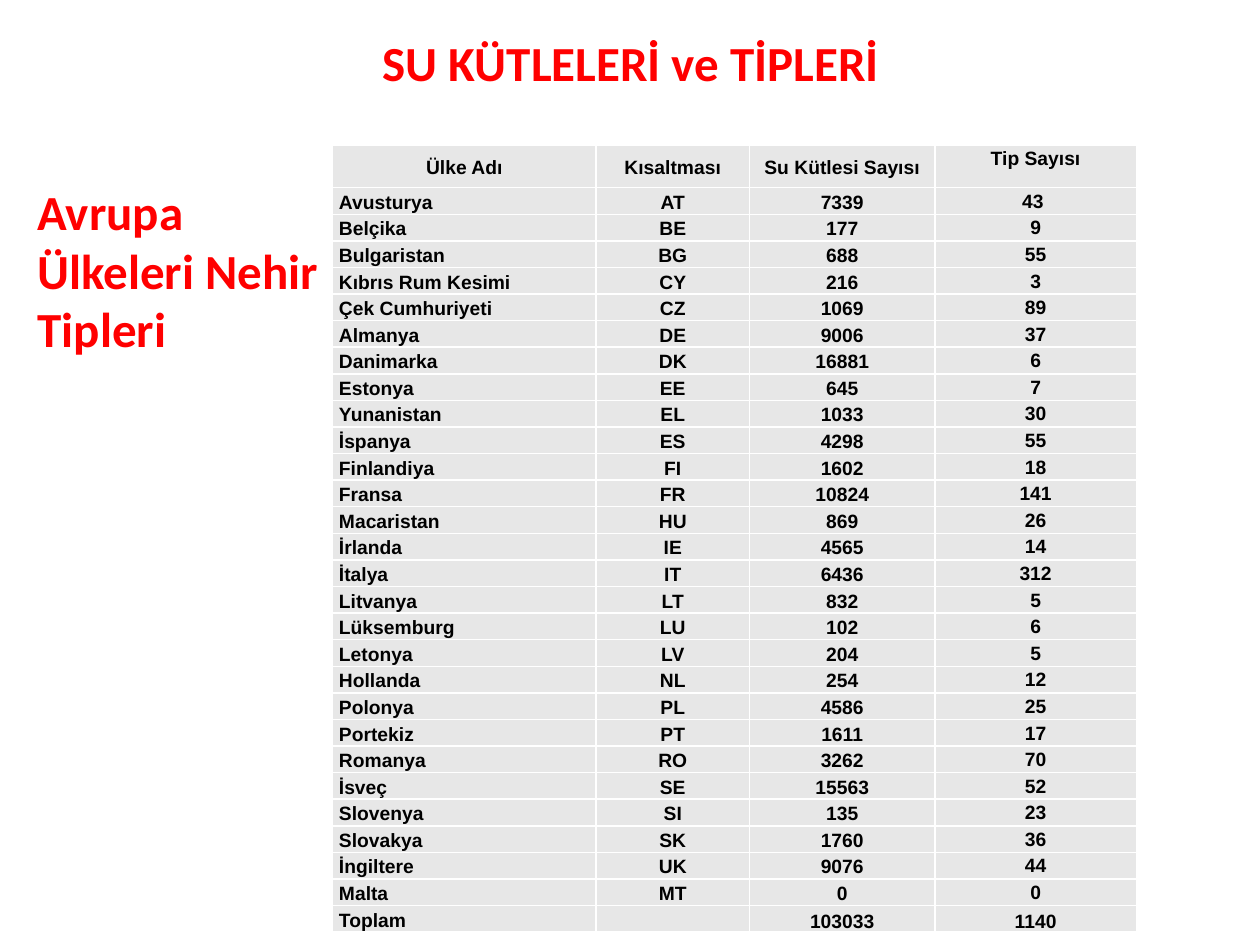
from typing import NamedTuple

from lxml import etree
from pptx import Presentation
from pptx.dml.color import RGBColor
from pptx.enum import text
from pptx.oxml.ns import qn
from pptx.util import Emu, Inches, Pt

SLIDE_W, SLIDE_H = Inches(10), Inches(7.5)
RED, BLACK, WHITE, GREY = "FF0000", "000000", "FFFFFF", "E7E7E7"
CENTER, LEFT = text.PP_ALIGN.CENTER, text.PP_ALIGN.LEFT
TOP, MIDDLE, BOTTOM = (
    text.MSO_ANCHOR.TOP, text.MSO_ANCHOR.MIDDLE, text.MSO_ANCHOR.BOTTOM)


class Box(NamedTuple):
    left: float
    top: float
    width: float
    height: float

    def lengths(self) -> list[Emu]:
        sides = (SLIDE_W, SLIDE_H, SLIDE_W, SLIDE_H)
        return [Emu(round(share / 100 * side)) for share, side in zip(self, sides)]


class Heading(NamedTuple):
    text: str
    box: Box
    align: text.PP_ALIGN


class Column(NamedTuple):
    title: str
    share: float
    align: text.PP_ALIGN
    anchor: text.MSO_ANCHOR
    total_anchor: text.MSO_ANCHOR


class Country(NamedTuple):
    name: str
    code: str
    bodies: str
    types: str


HEADINGS = [
    Heading("SU KÜTLELERİ ve TİPLERİ", Box(13.8, 2.8, 72.5, 7.6), CENTER),
    Heading("Avrupa Ülkeleri Nehir Tipleri", Box(2, 18.53, 24.4, 20.27), LEFT),
]
TABLE_BOX = Box(26.4, 15.33, 63.8, 83.2)
HEADER_H, ROW_H = Inches(0.34), Inches(0.21)
COLUMNS = [
    Column("Ülke Adı", 20.9, LEFT, MIDDLE, MIDDLE),
    Column("Kısaltması", 12.2, CENTER, MIDDLE, MIDDLE),
    Column("Su Kütlesi Sayısı", 14.7, CENTER, MIDDLE, BOTTOM),
    Column("Tip Sayısı", 16, CENTER, TOP, BOTTOM),
]
COUNTRIES = [
    Country("Avusturya", "AT", "7339", "43 "),
    Country("Belçika", "BE", "177", "9"),
    Country("Bulgaristan", "BG", "688", "55"),
    Country("Kıbrıs Rum Kesimi", "CY", "216", "3"),
    Country("Çek Cumhuriyeti", "CZ", "1069", "89"),
    Country("Almanya", "DE", "9006", "37"),
    Country("Danimarka", "DK", "16881", "6"),
    Country("Estonya", "EE", "645", "7"),
    Country("Yunanistan", "EL", "1033", "30"),
    Country("İspanya", "ES", "4298", "55"),
    Country("Finlandiya", "FI", "1602", "18"),
    Country("Fransa", "FR", "10824", "141"),
    Country("Macaristan", "HU", "869", "26"),
    Country("İrlanda", "IE", "4565", "14"),
    Country("İtalya", "IT", "6436", "312"),
    Country("Litvanya", "LT", "832", "5"),
    Country("Lüksemburg", "LU", "102", "6"),
    Country("Letonya", "LV", "204", "5"),
    Country("Hollanda", "NL", "254", "12"),
    Country("Polonya", "PL", "4586", "25"),
    Country("Portekiz", "PT", "1611", "17"),
    Country("Romanya", "RO", "3262", "70"),
    Country("İsveç", "SE", "15563", "52"),
    Country("Slovenya", "SI", "135", "23"),
    Country("Slovakya", "SK", "1760", "36"),
    Country("İngiltere", "UK", "9076", "44"),
    Country("Malta", "MT", "0", "0"),
    Country("Toplam", "", "103033", "1140"),
]


def color(value: str) -> RGBColor:
    return RGBColor.from_string(value)


def style_runs(p, font: str, size: float, fill: str) -> None:
    for r in p.runs:
        r.font.name, r.font.size, r.font.bold = font, Pt(size), True
        r.font.color.rgb = color(fill)


def draw_heading(slide, heading: Heading) -> None:
    tf = slide.shapes.add_textbox(*heading.box.lengths()).text_frame
    tf.word_wrap = True
    tf.auto_size = text.MSO_AUTO_SIZE.SHAPE_TO_FIT_TEXT
    p = tf.paragraphs[0]
    p.text, p.alignment = heading.text, heading.align
    style_runs(p, "Calibri", 28, RED)


def draw_borders(cell) -> None:
    tc_pr = cell._tc.get_or_add_tcPr()
    for i, side in enumerate(("lnL", "lnR", "lnT", "lnB")):
        ln = etree.Element(qn(f"a:{side}"), w=str(Pt(1)))
        fill = etree.SubElement(ln, qn("a:solidFill"))
        etree.SubElement(fill, qn("a:srgbClr"), val=WHITE)
        tc_pr.insert(i, ln)


def draw_cell(cell, value: str, align: text.PP_ALIGN, anchor: text.MSO_ANCHOR) -> None:
    cell.margin_left = cell.margin_right = Inches(0.05)
    cell.margin_top = cell.margin_bottom = 0
    cell.vertical_anchor = anchor
    cell.fill.solid()
    cell.fill.fore_color.rgb = color(GREY)
    draw_borders(cell)
    p = cell.text_frame.paragraphs[0]
    p.text, p.alignment, p.line_spacing = value, align, 1.15
    style_runs(p, "Arial", 11, BLACK)
    if not value:
        etree.SubElement(p._p, qn("a:endParaRPr"), sz="1100")


def draw_table(slide) -> None:
    rows = [tuple(col.title for col in COLUMNS), *COUNTRIES]
    last = len(rows) - 1
    table = slide.shapes.add_table(
        len(rows), len(COLUMNS), *TABLE_BOX.lengths()).table
    table.first_row = table.horz_banding = False
    for c, col in enumerate(COLUMNS):
        table.columns[c].width = round(SLIDE_W * col.share / 100)
    for r, row in enumerate(rows):
        table.rows[r].height = ROW_H if r else HEADER_H
        for c, (col, value) in enumerate(zip(COLUMNS, row)):
            align = col.align if r else CENTER
            anchor = col.total_anchor if r == last else col.anchor
            draw_cell(table.cell(r, c), value, align, anchor)


def main() -> None:
    prs = Presentation()
    prs.slide_width, prs.slide_height = SLIDE_W, SLIDE_H
    slide = prs.slides.add_slide(prs.slide_layouts[6])
    for heading in HEADINGS:
        draw_heading(slide, heading)
    draw_table(slide)
    prs.save("out.pptx")


if __name__ == "__main__":
    main()
